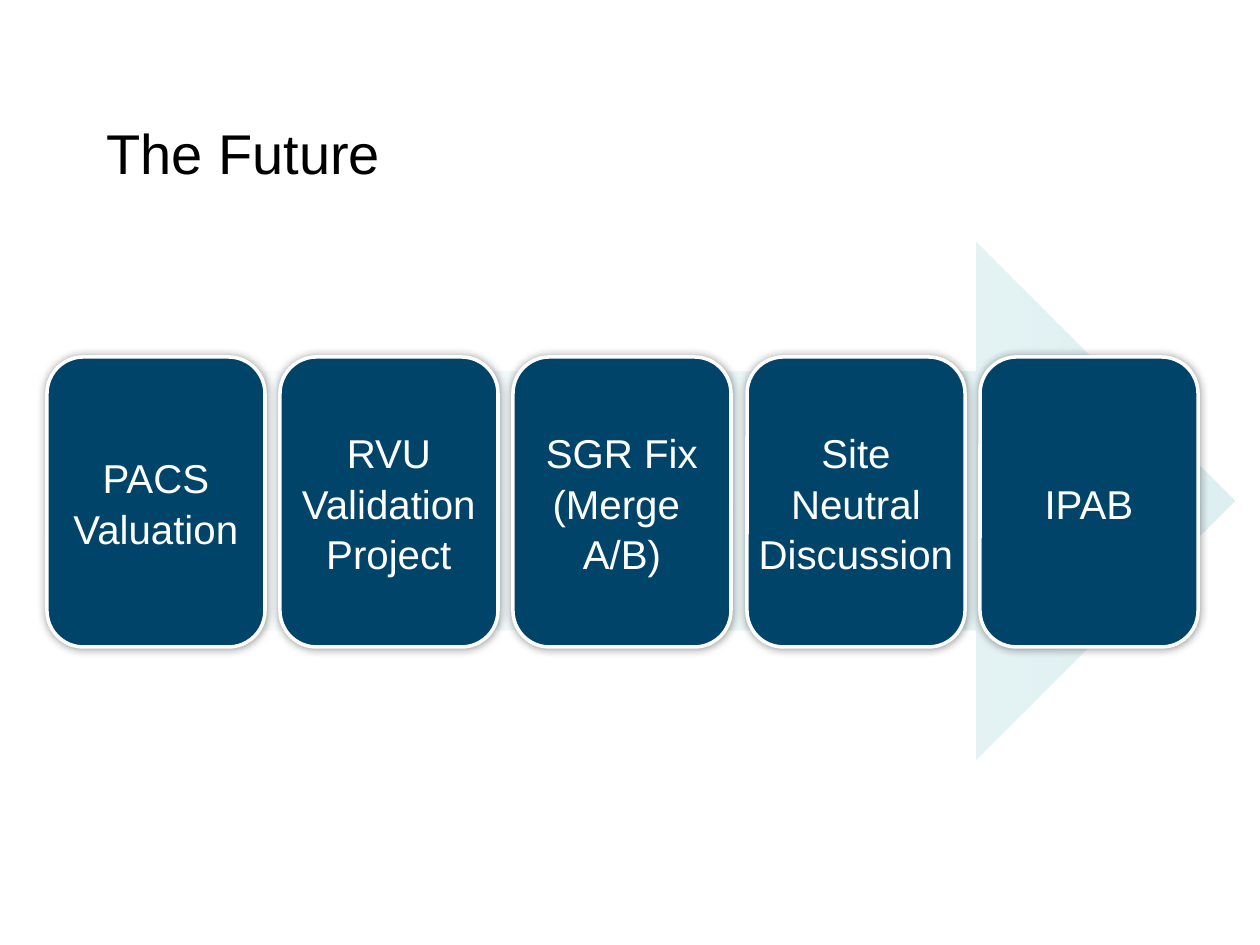
from lxml import etree
from pptx import Presentation
from pptx.dml.color import RGBColor
from pptx.enum.shapes import MSO_SHAPE
from pptx.enum.text import MSO_ANCHOR, PP_ALIGN
from pptx.oxml.ns import qn
from pptx.util import Pt

PX = 914400 / 126
ARROW, CARD = MSO_SHAPE.RIGHT_ARROW, MSO_SHAPE.ROUNDED_RECTANGLE
MIDDLE = MSO_ANCHOR.MIDDLE
LEFT, CENTER = PP_ALIGN.LEFT, PP_ALIGN.CENTER
BLACK = RGBColor(0x00, 0x00, 0x00)
WHITE = RGBColor(0xFF, 0xFF, 0xFF)
NAVY = RGBColor(0x00, 0x44, 0x6A)
AQUA = RGBColor(0xBB, 0xE0, 0xE3)
TOPICS = [
    "PACS Valuation",
    "RVU Validation Project",
    "SGR Fix (Merge \nA/B)",
    "Site Neutral Discussion",
    "IPAB",
]


def px(*values):
    return [round(v * PX) for v in values]


def write(sp, text, size, color, align=LEFT, spacing=1.0):
    tf = sp.text_frame
    tf.word_wrap = True
    tf.vertical_anchor = MIDDLE
    tf.text = text
    for p in tf.paragraphs:
        p.alignment = align
        p.line_spacing = spacing
        p.font.size = Pt(size)
        p.font.name = "Arial"
        p.font.color.rgb = color
    return tf


def add_title(s, text):
    write(s.shapes.add_textbox(*px(94, 73, 1134, 158)), text, 32, BLACK)


def add_arrow(s):
    sp = s.shapes.add_shape(ARROW, *px(24, 242, 1211, 518))
    sp.shadow.inherit = False
    sp.line.fill.background()
    sp.fill.gradient()
    sp.fill.gradient_angle = 0
    for stop, position, alpha in zip(sp.fill.gradient_stops, (0, 1), (0, 50000)):
        stop.position = position
        stop.color.rgb = AQUA
    for color, alpha in zip(sp._element.spPr.iter(qn("a:srgbClr")), (0, 50000)):
        etree.SubElement(color, qn("a:alpha"), val=str(alpha))


def add_glow_shadow(sp):
    sp.shadow.inherit = False
    effects = sp._element.spPr.find(qn("a:effectLst"))
    shadow = etree.SubElement(effects, qn("a:outerShdw"), blurRad=str(Pt(5)),
                              dist="0", dir="0", rotWithShape="0")
    color = etree.SubElement(shadow, qn("a:srgbClr"), val=str(BLACK))
    etree.SubElement(color, qn("a:alpha"), val="40000")


def add_card(s, x, text):
    sp = s.shapes.add_shape(CARD, *px(x, 357, 218, 290))
    sp.fill.solid()
    sp.fill.fore_color.rgb = NAVY
    sp.line.color.rgb = WHITE
    sp.line.width = Pt(2)
    add_glow_shadow(sp)
    tf = write(sp, text, 23, WHITE, CENTER, 1.05)
    tf.margin_left = tf.margin_right = 0
    tf.margin_top, tf.margin_bottom = px(5, 5)


def main():
    prs = Presentation()
    prs.slide_width, prs.slide_height = px(1260, 945)
    s = prs.slides.add_slide(prs.slide_layouts[6])
    add_title(s, "The Future")
    add_arrow(s)
    for i, topic in enumerate(TOPICS):
        add_card(s, 47 + i * 1167 // 5, topic)
    prs.save("out.pptx")


if __name__ == "__main__":
    main()
